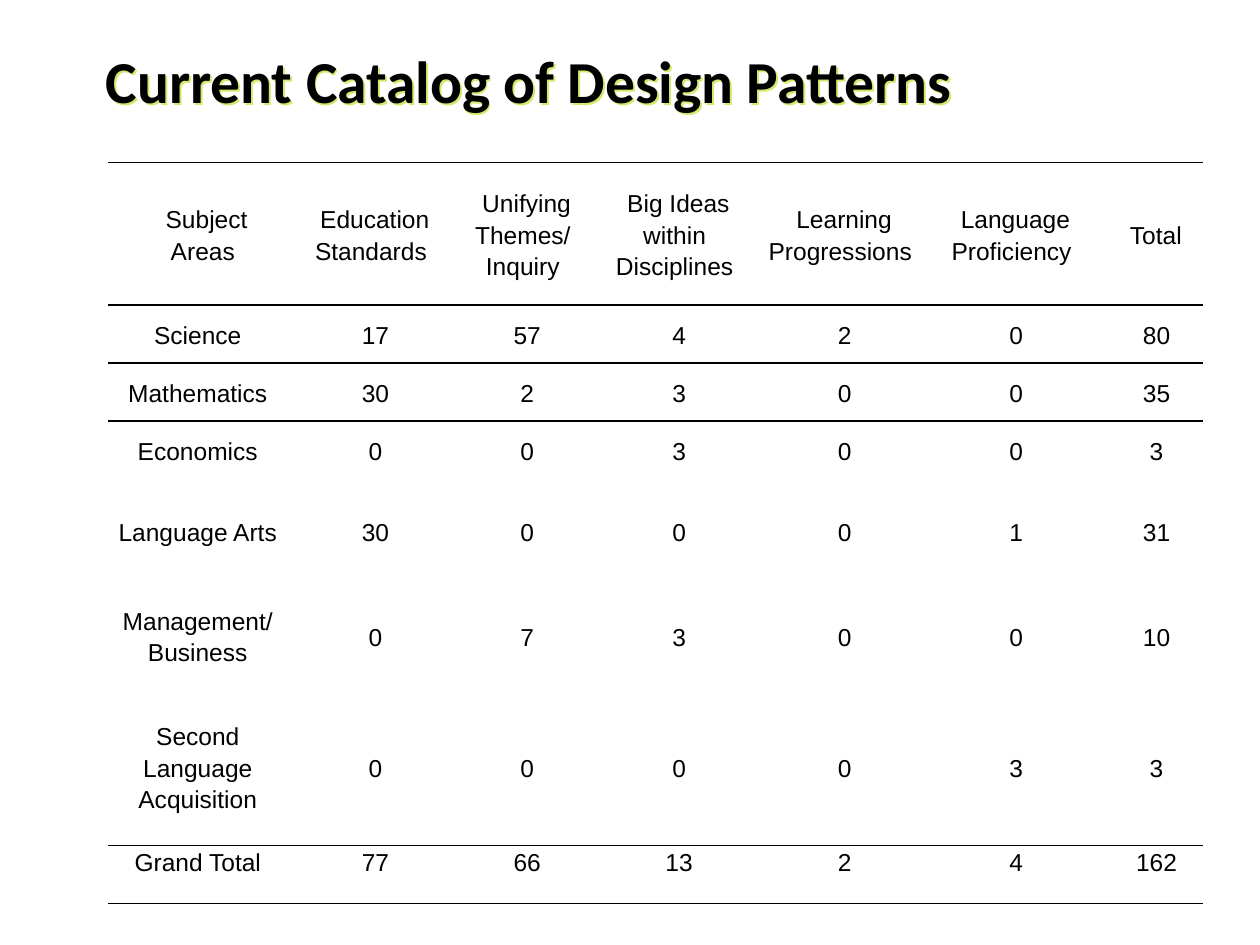
from lxml import etree
from pptx import Presentation
from pptx.dml.color import RGBColor
from pptx.enum.text import MSO_ANCHOR as ANCHOR, PP_ALIGN as ALIGN
from pptx.oxml import parse_xml
from pptx.oxml.ns import nsdecls, qn
from pptx.util import Inches, Pt

COLORS = {"ink": "000000", "glow": "D6E86B", "paper": "FFFFFF"}
NO_STYLE = "{2D5ABB26-0587-4C30-8999-92F81FD0307C}"
COLUMN_WIDTHS = [1.42, 1.25, 1.16, 1.25, 1.38, 1.34, 0.89]
ROW_HEIGHTS = [1.13, 0.46, 0.46, 0.46, 0.83, 0.83, 1.25, 0.46]
CATALOG = [
    ["Subject Areas", "Education Standards", "Unifying Themes/ Inquiry",
     "Big Ideas within Disciplines", "Learning Progressions",
     "Language Proficiency", "Total"],
    ["Science", 17, 57, 4, 2, 0, 80],
    ["Mathematics", 30, 2, 3, 0, 0, 35],
    ["Economics", 0, 0, 3, 0, 0, 3],
    ["Language Arts", 30, 0, 0, 0, 1, 31],
    ["Management/ Business", 0, 7, 3, 0, 0, 10],
    ["Second Language Acquisition", 0, 0, 0, 0, 3, 3],
    ["Grand Total", 77, 66, 13, 2, 4, 162],
]
LAST = len(CATALOG) - 1
RULED_ABOVE = {0, 1, 2, LAST}
RULED_BELOW = {0, 1, LAST - 1, LAST}


def write_text(frame, text, font="Arial", size=14, bold=False, color="ink",
               align=ALIGN.LEFT, spacing=None, margin=0, indent=0):
    paragraph = frame.paragraphs[0]
    paragraph.alignment = align
    if spacing:
        paragraph.line_spacing = spacing
    properties = paragraph._p.get_or_add_pPr()
    properties.set("marL", str(Inches(margin)))
    properties.set("indent", str(Inches(indent)))
    run = paragraph.add_run()
    run.text = text
    run.font.name = font
    run.font.size = Pt(size)
    run.font.bold = bold
    run.font.color.rgb = RGBColor.from_string(COLORS[color])


def add_glow(shape):
    shape._element.spPr.append(parse_xml(
        f'<a:effectLst {nsdecls("a")}>'
        f'<a:outerShdw dist="{Pt(1.5)}" dir="2700000" algn="ctr" rotWithShape="0">'
        f'<a:srgbClr val="{COLORS["glow"]}"/></a:outerShdw></a:effectLst>'))


def rule_cell(cell, side):
    line = etree.SubElement(cell._tc.get_or_add_tcPr(), qn(f"a:{side}"), w=str(Pt(1)))
    fill = etree.SubElement(line, qn("a:solidFill"))
    etree.SubElement(fill, qn("a:srgbClr"), val=COLORS["ink"])


def place_title(slide, left, top, width, height):
    title = slide.shapes.title
    title.left, title.top = Inches(left), Inches(top)
    title.width, title.height = Inches(width), Inches(height)
    title.text_frame.vertical_anchor = ANCHOR.TOP
    write_text(title.text_frame, "Current Catalog of Design Patterns",
               font="Calibri", size=34, bold=True)
    add_glow(title)


def fill_cell(cell, value, row, column):
    cell.margin_left = cell.margin_right = Inches(0.07)
    cell.margin_top = cell.margin_bottom = 0
    cell.vertical_anchor = ANCHOR.TOP if row == LAST else ANCHOR.MIDDLE
    if row == 0:
        margin, indent = 0.08, 0.06
    elif column == 0:
        margin, indent = 0, 0
    else:
        margin, indent = 0.08, 0.07
    write_text(cell.text_frame, str(value), align=ALIGN.CENTER, spacing=1.15,
               margin=margin, indent=indent)
    if row in RULED_ABOVE:
        rule_cell(cell, "lnT")
    if row in RULED_BELOW:
        rule_cell(cell, "lnB")
    cell.fill.background()


def place_catalog(slide, left, top, width, height):
    catalog = slide.shapes.add_table(
        len(ROW_HEIGHTS), len(COLUMN_WIDTHS),
        Inches(left), Inches(top), Inches(width), Inches(height)).table
    catalog.first_row = catalog.horz_banding = False
    catalog._tbl.tblPr.find(qn("a:tableStyleId")).text = NO_STYLE
    for column, column_width in zip(catalog.columns, COLUMN_WIDTHS):
        column.width = Inches(column_width)
    for row, row_height in zip(catalog.rows, ROW_HEIGHTS):
        row.height = Inches(row_height)
    for row, values in enumerate(CATALOG):
        for column, value in enumerate(values):
            fill_cell(catalog.cell(row, column), value, row, column)


def main():
    deck = Presentation()
    deck.slide_width, deck.slide_height = Inches(10), Inches(7.5)
    slide = deck.slides.add_slide(deck.slide_layouts[5])
    slide.background.fill.solid()
    slide.background.fill.fore_color.rgb = RGBColor.from_string(COLORS["paper"])
    place_title(slide, 0.74, 0.3, 9, 1.07)
    place_catalog(slide, 0.86, 1.29, 8.7, 5.89)
    deck.save("out.pptx")


if __name__ == "__main__":
    main()
